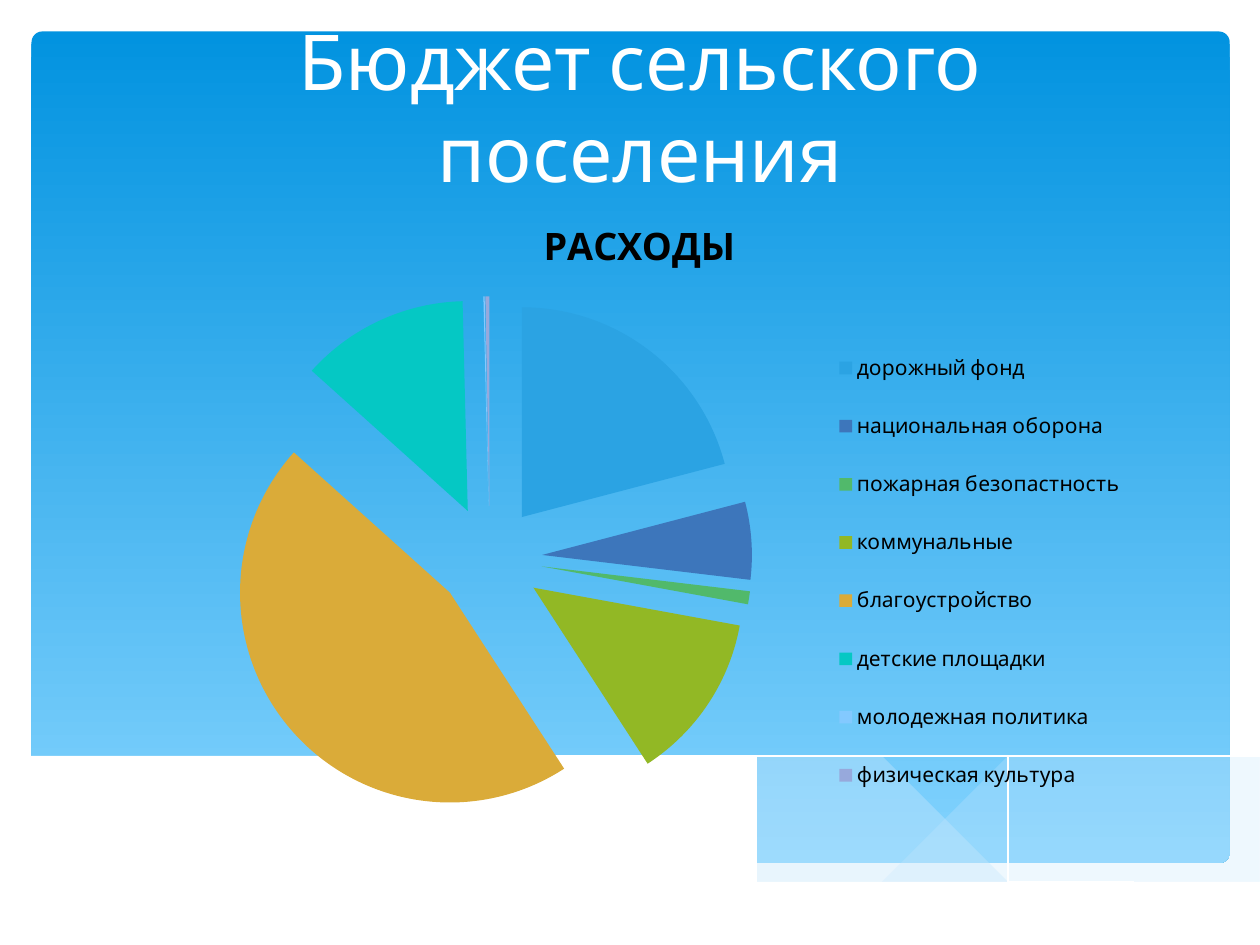
import pptx
import pptx.chart.data
import pptx.dml.color
import pptx.enum.chart
import pptx.enum.dml
import pptx.enum.shapes
import pptx.enum.text
import pptx.oxml
import pptx.oxml.ns
import pptx.util

COLORS = {
    "sky_top": "0293E0", "sky_bottom": "83D3FE", "mist": "C6E7FC",
    "white": "FFFFFF", "black": "000000",
}
EXPENSES = [
    ("дорожный фонд", 21, "2BA3E3"),
    ("национальная оборона", 6, "3D76BB"),
    ("пожарная безопастность", 1, "51B96B"),
    ("коммунальные", 13, "92B825"),
    ("благоустройство", 46, "DAAB39"),
    ("детские площадки", 13, "05C8C4"),
    ("молодежная политика", 0.1, "83C9FF"),
    ("физическая культура", 0.3, "97A9DC"),
]
RIGHT_MIST_TOP = [(9.77, 6.01), (9.22, 6.11), (8.62, 6.25), (7.8, 6.44), (7.07, 6.59), (6.62, 6.67)]
RIGHT_MIST_BOTTOM = [(6.62, 6.67), (7.19, 6.74), (7.7, 6.79), (8.15, 6.8), (8.64, 6.77),
                     (9.07, 6.71), (9.44, 6.61), (9.77, 6.49)]
LONG_MIST_TOP = [(8.94, 6.75), (8.08, 6.62), (7.07, 6.42), (6.3, 6.24), (5.55, 6.07),
                 (4.89, 5.96), (4.2, 5.89), (3.62, 5.87), (2.87, 5.93)]
LONG_MIST_BOTTOM = [(2.87, 5.93), (3.63, 6.04), (4.5, 6.24), (5.3, 6.42), (6.02, 6.57),
                    (6.81, 6.7), (7.49, 6.78), (8.08, 6.8), (8.49, 6.79), (8.94, 6.75)]
FALLING_LINE = [(3.1, 5.97), (3.44, 5.92), (4.02, 5.89), (4.69, 5.9), (5.57, 5.98),
                (6.66, 6.15), (7.61, 6.35), (8.32, 6.52), (9.08, 6.73)]
RISING_LINE = [(6.14, 6.59), (6.73, 6.43), (7.49, 6.25), (8.37, 6.06), (8.97, 5.96),
               (9.39, 5.9), (9.76, 5.87)]
HILL_TOP = [(9.77, 6.48), (9.3, 6.64), (8.75, 6.75), (8.09, 6.79), (7.26, 6.74),
            (6.48, 6.64), (5.55, 6.47), (4.47, 6.22), (3.65, 6.04), (2.92, 5.92),
            (2.3, 5.87), (1.77, 5.86), (1.19, 5.89), (0.76, 5.97), (0.46, 6.05), (0.23, 6.15)]
HILL_BASE = [(0.23, 7.31), (9.77, 7.31)]


def smooth(points, steps=6):
    padded = [points[0], *points, points[-1]]
    curve = [points[0]]
    for before, start, end, after in zip(padded, padded[1:], padded[2:], padded[3:]):
        for step in range(1, steps + 1):
            t = step / steps
            curve.append(tuple(
                (2 * b + (c - a) * t + (2 * a - 5 * b + 4 * c - d) * t ** 2
                 + (3 * b - a - 3 * c + d) * t ** 3) / 2
                for a, b, c, d in zip(before, start, end, after)))
    return curve


def rgb(color):
    return pptx.dml.color.RGBColor.from_string(color)


class BudgetSlide:
    font = "Cabin"
    columns = 10

    def __init__(self, deck):
        self.cell = deck.slide_width / self.columns
        self.slide = deck.slides.add_slide(deck.slide_layouts[5])

    def grid(self, *lengths):
        return [pptx.util.Emu(round(length * self.cell)) for length in lengths]

    def format_font(self, font, **values):
        for key, value in {"name": self.font, **values}.items():
            if key == "color":
                font.color.rgb = rgb(COLORS[value])
            else:
                setattr(font, key, value)

    def sky(self, box):
        panel = self.slide.shapes.add_shape(
            pptx.enum.shapes.MSO_SHAPE.ROUNDED_RECTANGLE, *self.grid(*box))
        panel.adjustments[0] = 0.013
        panel.shadow.inherit = False
        panel.line.fill.background()
        panel.fill.gradient()
        panel.fill.gradient_angle = 270
        for stop, position, color in zip(panel.fill.gradient_stops, (0, 1), ("sky_top", "sky_bottom")):
            stop.position = position
            stop.color.rgb = rgb(COLORS[color])

    def outline(self, points, closed):
        builder = self.slide.shapes.build_freeform(*points[0], scale=self.cell)
        builder.add_line_segments(points[1:], close=closed)
        curve = builder.convert_to_shape()
        curve.shadow.inherit = False
        return curve

    def wave(self, points, color, opacity=100):
        water = self.outline(points, True)
        water.line.fill.background()
        water.fill.solid()
        water.fill.fore_color.rgb = rgb(COLORS[color])
        if opacity < 100:
            tint = water.fill._xPr.find(".//" + pptx.oxml.ns.qn("a:srgbClr"))
            alpha = pptx.oxml.parse_xml(f'<a:alpha {pptx.oxml.ns.nsdecls("a")} val="{opacity * 1000}"/>')
            tint.append(alpha)

    def ripple(self, points):
        crest = self.outline(smooth(points), False)
        crest.fill.background()
        crest.line.color.rgb = rgb(COLORS["white"])
        crest.line.width = pptx.util.Pt(0)

    def title(self, text, box):
        heading = self.slide.shapes.title
        self.slide.shapes._spTree.append(heading._element)
        heading.left, heading.top, heading.width, heading.height = self.grid(*box)
        frame = heading.text_frame
        frame.text = text
        for key, value in {
            "word_wrap": True,
            "auto_size": pptx.enum.text.MSO_AUTO_SIZE.NONE,
            "vertical_anchor": pptx.enum.text.MSO_ANCHOR.BOTTOM,
        }.items():
            setattr(frame, key, value)
        line = frame.paragraphs[0]
        line.alignment = pptx.enum.text.PP_ALIGN.CENTER
        self.format_font(line.runs[0].font, size=pptx.util.Pt(44), color="white")

    def place(self, part, x, y, w, h, inner=False):
        target = '<c:layoutTarget val="inner"/>' if inner else ""
        sizes = "".join(f'<c:{key} val="{value}"/>' for key, value in zip("xywh", (x, y, w, h)))
        layout = pptx.oxml.parse_xml(
            f'<c:layout {pptx.oxml.ns.nsdecls("c")}><c:manualLayout>{target}'
            f'<c:xMode val="edge"/><c:yMode val="edge"/>{sizes}</c:manualLayout></c:layout>')
        for old in part.findall(pptx.oxml.ns.qn("c:layout")):
            part.remove(old)
        part.insert(0 if inner else 1, layout)

    def pie(self, name, rows, box):
        data = pptx.chart.data.CategoryChartData()
        data.categories = [label for label, _, _ in rows]
        data.add_series(name, [value for _, value, _ in rows])
        chart = self.slide.shapes.add_chart(
            pptx.enum.chart.XL_CHART_TYPE.PIE, *self.grid(*box), data).chart
        self.format_font(chart.font, size=pptx.util.Pt(18), color="black")
        chart.has_title = True
        caption = chart.chart_title.text_frame
        caption.text = name
        self.format_font(caption.paragraphs[0].runs[0].font,
                         size=pptx.util.Pt(21.6), bold=True, color="black")
        chart.has_legend = True
        chart.legend.position = pptx.enum.chart.XL_LEGEND_POSITION.RIGHT
        chart.legend.include_in_layout = False
        self.format_font(chart.legend.font, size=pptx.util.Pt(12), color="black")
        plot = chart.plots[0]
        plot.vary_by_categories = True
        series = plot.series[0]
        for index, (_, _, color) in enumerate(rows):
            fill = series.points[index].format.fill
            fill.solid()
            fill.fore_color.rgb = rgb(color)
        explosion = pptx.oxml.parse_xml(f'<c:explosion {pptx.oxml.ns.nsdecls("c")} val="25"/>')
        series._element.find(pptx.oxml.ns.qn("c:dPt")).addprevious(explosion)
        for point in series._element.findall(pptx.oxml.ns.qn("c:dPt")):
            point.find(pptx.oxml.ns.qn("c:spPr")).addprevious(
                pptx.oxml.parse_xml(f'<c:explosion {pptx.oxml.ns.nsdecls("c")} val="25"/>'))
        self.place(chart._chartSpace.chart.plotArea, 0.1, 0.16, 0.51, 0.81, inner=True)
        self.place(chart.legend._element, 0.68, 0.2, 0.3, 0.77)


def main():
    deck = pptx.Presentation()
    deck.slide_width, deck.slide_height = pptx.util.Inches(10), pptx.util.Inches(7.5)
    budget = BudgetSlide(deck)
    budget.sky((0.25, 0.25, 9.51, 6.6))
    budget.wave(smooth(RIGHT_MIST_TOP) + smooth(RIGHT_MIST_BOTTOM), "mist", 29)
    budget.wave(smooth(LONG_MIST_TOP) + smooth(LONG_MIST_BOTTOM), "mist", 40)
    budget.ripple(FALLING_LINE)
    budget.ripple(RISING_LINE)
    budget.wave(smooth(HILL_TOP) + HILL_BASE, "white")
    budget.title("Бюджет сельского поселения", (0.83, 0.68, 8.5, 0.94))
    budget.pie("РАСХОДЫ", EXPENSES, (0.98, 1.53, 8.19, 5.14))
    deck.save("out.pptx")


if __name__ == "__main__":
    main()
